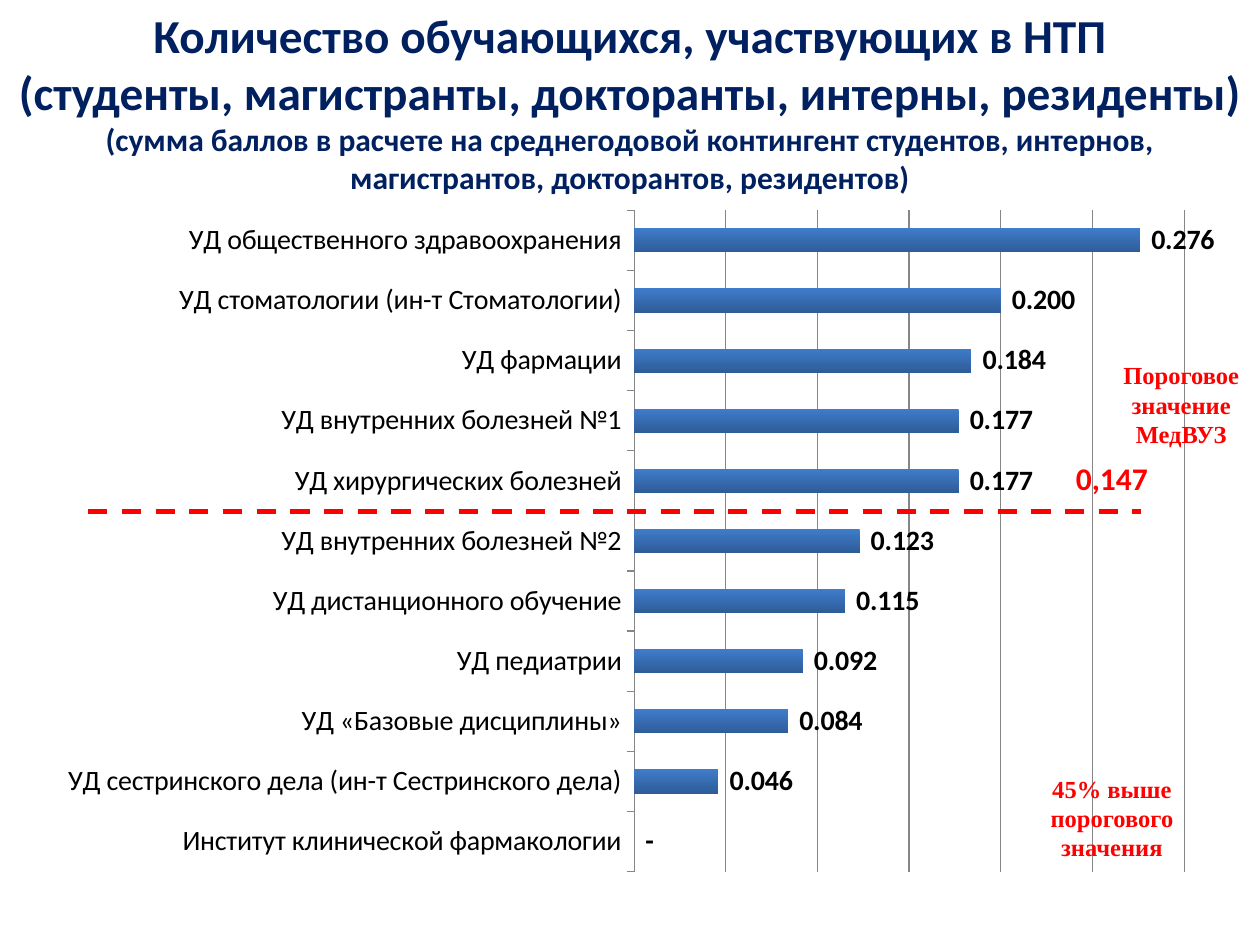
from dataclasses import dataclass

from lxml.etree import SubElement
from pptx import Presentation
from pptx.chart.data import CategoryChartData
from pptx.dml.color import RGBColor
from pptx.enum.chart import XL_CHART_TYPE, XL_LABEL_POSITION, XL_TICK_MARK
from pptx.enum.dml import MSO_LINE
from pptx.enum.shapes import MSO_CONNECTOR
from pptx.enum.text import PP_ALIGN
from pptx.oxml import parse_xml
from pptx.oxml.ns import nsdecls, qn
from pptx.util import Pt

NAVY, RED, BLACK, GREY = "002060", "FF0000", "000000", "868686"
BAR_TOP, BAR_BOTTOM = "3F7CCB", "2E5C97"
SANS, SERIF = "Calibri", "Times New Roman"
NUMBER_FORMAT = '_-* #,##0.000_-;\\-* #,##0.000_-;_-* "-"?'

SCORES = [
    ("Институт клинической фармакологии", 0),
    ("УД сестринского дела (ин-т Сестринского дела)", 0.046),
    ("УД «Базовые дисциплины»", 0.084),
    ("УД педиатрии", 0.092),
    ("УД дистанционного обучение", 0.115),
    ("УД внутренних болезней №2", 0.123),
    ("УД хирургических болезней", 0.177),
    ("УД внутренних болезней №1", 0.177),
    ("УД фармации", 0.184),
    ("УД стоматологии (ин-т Стоматологии)", 0.2),
    ("УД общественного здравоохранения", 0.276),
]


@dataclass
class Run:
    text: str
    size: float


@dataclass
class TextBox:
    left: float
    top: float
    width: float
    height: float
    paragraphs: list[list[Run]]
    color: str = RED
    font: str = SERIF
    align: PP_ALIGN = PP_ALIGN.CENTER
    wrap: bool = True


TEXT_BOXES = [
    TextBox(0, 0, 720, 116.6, [
        [Run("Количество обучающихся, участвующих в НТП", 27)],
        [Run("(студенты, магистранты, докторанты, интерны, резиденты)", 27),
         Run(" ", 20),
         Run("(сумма баллов в расчете на среднегодовой контингент студентов, "
             "интернов, магистрантов, докторантов, резидентов)", 18)],
    ], color=NAVY, font=SANS),
    TextBox(607.7, 258.5, 56.2, 28.8, [[Run("0,147", 18)]],
            font=SANS, align=PP_ALIGN.LEFT, wrap=False),
    TextBox(630, 202.3, 90, 58.3, [[Run("Пороговое значение МедВУЗ", 14)]]),
    TextBox(590.4, 438.5, 90, 58.3,
            [[Run("45% выше", 14)], [Run("порогового значения", 14)]]),
]


def rgb(value: str) -> RGBColor:
    return RGBColor.from_string(value)


def add_text(shapes, box: TextBox) -> None:
    sp = shapes.add_textbox(Pt(box.left), Pt(box.top), Pt(box.width), Pt(box.height))
    tf = sp.text_frame
    tf.word_wrap = box.wrap
    for i, runs in enumerate(box.paragraphs):
        p = tf.add_paragraph() if i else tf.paragraphs[0]
        p.alignment = box.align
        for run in runs:
            r = p.add_run()
            r.text = run.text
            r.font.name = box.font
            r.font.size = Pt(run.size)
            r.font.bold = True
            r.font.color.rgb = rgb(box.color)


def set_plot_layout(chart, x: float, y: float, w: float, h: float) -> None:
    """Fix the inner plot area, in fractions of the chart."""
    plot_area = chart._chartSpace.chart.plotArea
    for old in plot_area.findall(qn("c:layout")):
        plot_area.remove(old)
    plot_area.insert(0, parse_xml(
        f'<c:layout {nsdecls("c")}><c:manualLayout><c:layoutTarget val="inner"/>'
        '<c:xMode val="edge"/><c:yMode val="edge"/>'
        f'<c:x val="{x}"/><c:y val="{y}"/><c:w val="{w}"/><c:h val="{h}"/>'
        '</c:manualLayout></c:layout>'))


def add_score_chart(shapes) -> None:
    data = CategoryChartData(number_format=NUMBER_FORMAT)
    data.categories = [name for name, _ in SCORES]
    data.add_series("Баллы", [score for _, score in SCORES])
    chart = shapes.add_chart(XL_CHART_TYPE.BAR_CLUSTERED, Pt(28), Pt(112.3),
                             Pt(669.6), Pt(393.8), data).chart
    chart.has_legend = False
    chart.has_title = False
    chart.font.name = SANS
    chart.font.size = Pt(16)
    chart.font.color.rgb = rgb(BLACK)
    set_plot_layout(chart, 0.5, 0.02, 0.47, 0.96)

    names = chart.category_axis
    names.major_tick_mark = XL_TICK_MARK.OUTSIDE
    names.format.line.color.rgb = rgb(GREY)
    values = chart.value_axis
    values.visible = False
    values.minimum_scale, values.maximum_scale, values.major_unit = 0, 0.3, 0.05
    values.has_major_gridlines = True
    values.major_gridlines.format.line.color.rgb = rgb(GREY)

    plot = chart.plots[0]
    plot.gap_width = 150
    plot.vary_by_categories = False
    fill = plot.series[0].format.fill
    fill.gradient()
    fill.gradient_angle = 270
    for stop, color in zip(fill.gradient_stops, (BAR_TOP, BAR_BOTTOM)):
        stop.color.rgb = rgb(color)

    plot.has_data_labels = True
    labels = plot.data_labels
    labels.show_value = True
    labels.position = XL_LABEL_POSITION.OUTSIDE_END
    labels.number_format = NUMBER_FORMAT
    labels.number_format_is_linked = False
    labels.font.name = SANS
    labels.font.size = Pt(16)
    labels.font.bold = True
    labels.font.color.rgb = rgb(BLACK)


def add_threshold_line(shapes) -> None:
    line = shapes.add_connector(MSO_CONNECTOR.STRAIGHT,
                                Pt(50.4), Pt(292.3), Pt(652.3), Pt(292.3))
    line.line.color.rgb = rgb(RED)
    line.line.width = Pt(2.75)
    line.line.dash_style = MSO_LINE.DASH
    SubElement(line._element.spPr, qn("a:effectLst"))


def main() -> None:
    prs = Presentation()
    prs.slide_width, prs.slide_height = Pt(720), Pt(540)
    s = prs.slides.add_slide(prs.slide_layouts[6])
    title, *notes = TEXT_BOXES
    add_text(s.shapes, title)
    add_score_chart(s.shapes)
    add_threshold_line(s.shapes)
    for note in notes:
        add_text(s.shapes, note)
    prs.save("out.pptx")


if __name__ == "__main__":
    main()
